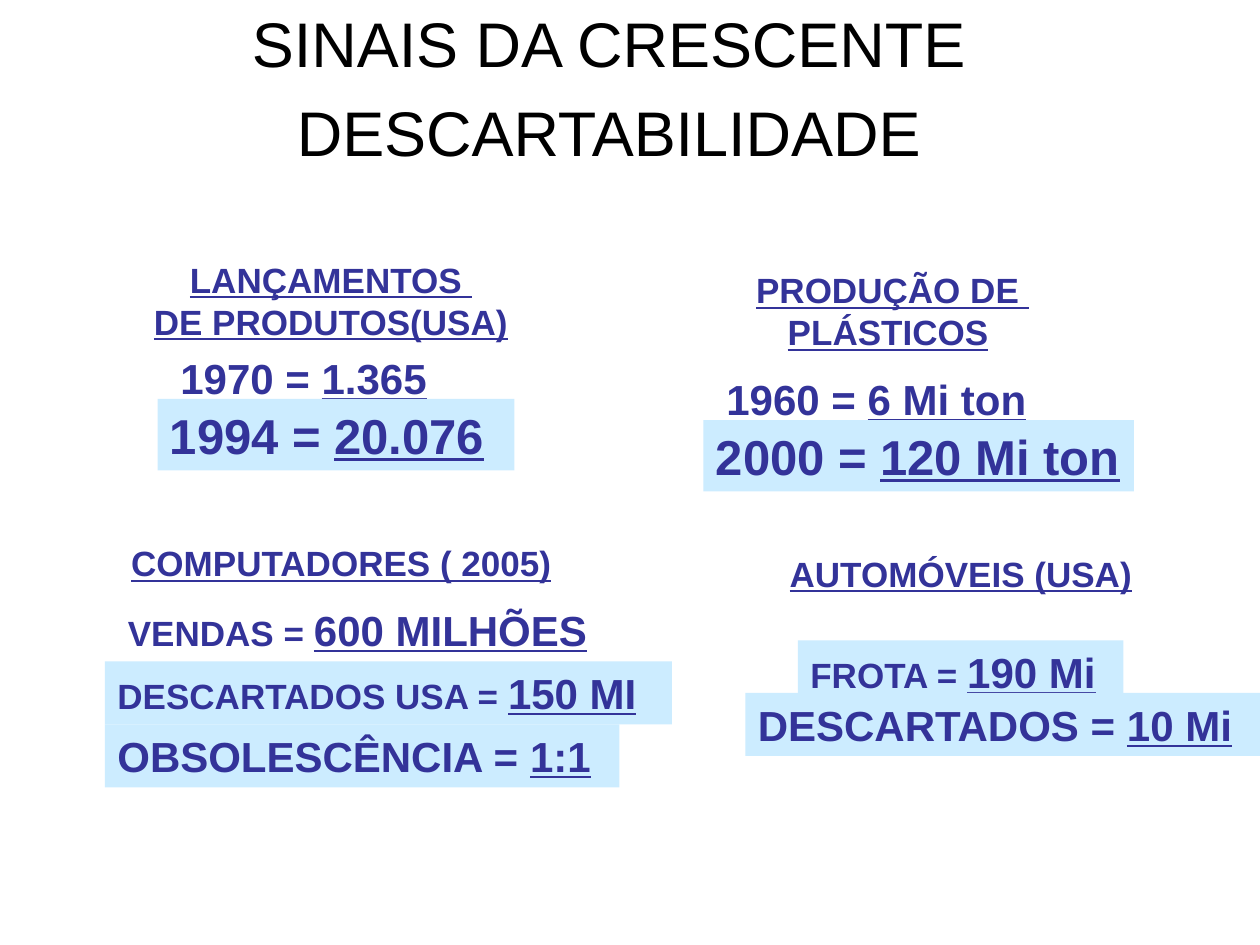
from dataclasses import dataclass

from pptx import Presentation
from pptx.dml.color import RGBColor
from pptx.enum.text import MSO_ANCHOR, PP_ALIGN as Align
from pptx.util import Inches, Pt

BLACK = RGBColor(0x00, 0x00, 0x00)
INDIGO = RGBColor(0x33, 0x33, 0x99)
PALE_BLUE = RGBColor(0xCC, 0xEC, 0xFF)

CELL = Inches(1) // 12
LEADING = 1.2
INSETS = 7.2


@dataclass(frozen=True)
class Span:
    text: str
    size: int
    underline: bool = False
    bold: bool = True
    color: RGBColor = INDIGO
    font: str = "Arial"


@dataclass(frozen=True)
class Fact:
    column: int
    row: int
    width: int
    label: str
    value: str
    label_size: int
    value_size: int
    filled: bool = True


@dataclass(frozen=True)
class Heading:
    column: int
    row: int
    width: int
    lines: tuple[str, ...]
    tail: tuple[Span, ...] = ()


FACTS = (
    Fact(16, 33, 29, "1970", "1.365", 24, 24, filled=False),
    Fact(15, 38, 34, "1994", "20.076", 28, 28),
    Fact(68, 35, 32, "1960", "6 Mi ton", 24, 24, filled=False),
    Fact(67, 40, 41, "2000", "120 Mi ton", 28, 28),
    Fact(11, 57, 47, "VENDAS", "600 MILHÕES", 20, 24, filled=False),
    Fact(10, 63, 54, "DESCARTADOS USA", "150 MI", 20, 24),
    Fact(10, 69, 49, "OBSOLESCÊNCIA", "1:1", 24, 24),
    Fact(76, 61, 31, "FROTA", "190 Mi", 20, 24),
    Fact(71, 66, 49, "DESCARTADOS", "10 Mi", 24, 24),
)

HEADINGS = (
    Heading(12, 24, 39, ("LANÇAMENTOS ", "DE PRODUTOS(USA)")),
    Heading(69, 25, 32, ("PRODUÇÃO DE ", "PLÁSTICOS"),
            (Span(" ", 20, bold=False, font="Times New Roman"),)),
    Heading(10, 51, 45, ("COMPUTADORES ( 2005)",)),
    Heading(72, 52, 39, ("AUTOMÓVEIS (USA)",)),
)

TITLE_LINES = ("SINAIS DA CRESCENTE", "DESCARTABILIDADE")


def add_text(page, column: int, row: int, width: int, height: float,
             lines: list[list[Span]], leading: float, align: Align):
    """Add a text box on the grid, one paragraph for each list of spans."""
    box = page.shapes.add_textbox(column * CELL, row * CELL, width * CELL, Pt(height))
    frame = box.text_frame
    frame.word_wrap = True
    for index, spans in enumerate(lines):
        para = frame.paragraphs[0] if index == 0 else frame.add_paragraph()
        para.alignment = align
        para.line_spacing = Pt(leading)
        for span in spans:
            run = para.add_run()
            run.text = span.text
            run.font.color.rgb = span.color
            formats = {"name": span.font, "size": Pt(span.size),
                       "bold": span.bold, "underline": span.underline}
            for name, value in formats.items():
                setattr(run.font, name, value)
    return box


def add_title(page) -> None:
    """Add the two-line title, centred vertically in its box."""
    lines = [[Span(text, 36, bold=False, color=BLACK)] for text in TITLE_LINES]
    box = add_text(page, 4, 3, 108, 55.2, lines, 51, Align.CENTER)
    box.text_frame.vertical_anchor = MSO_ANCHOR.MIDDLE


def add_fact(page, fact: Fact) -> None:
    """Add a label with its underlined value, on a pale band if filled."""
    spans = [Span(f"{fact.label} = ", fact.label_size),
             Span(fact.value, fact.value_size, underline=True)]
    leading = LEADING * fact.value_size
    box = add_text(page, fact.column, fact.row, fact.width, leading + INSETS,
                   [spans], leading, Align.LEFT)
    if fact.filled:
        box.fill.solid()
        box.fill.fore_color.rgb = PALE_BLUE


def add_heading(page, heading: Heading) -> None:
    """Add a centred, underlined group heading."""
    lines = [[Span(text, 20, underline=True)] for text in heading.lines]
    lines[-1].extend(heading.tail)
    leading = LEADING * 20
    add_text(page, heading.column, heading.row, heading.width,
             leading * len(lines) + INSETS, lines, leading, Align.CENTER)


def main() -> None:
    """Build the slide and save the deck."""
    deck = Presentation()
    deck.slide_width, deck.slide_height = 120 * CELL, 90 * CELL
    page = deck.slides.add_slide(deck.slide_layouts[6])
    add_title(page)
    for fact in FACTS:
        add_fact(page, fact)
    for heading in HEADINGS:
        add_heading(page, heading)
    deck.save("out.pptx")


if __name__ == "__main__":
    main()
